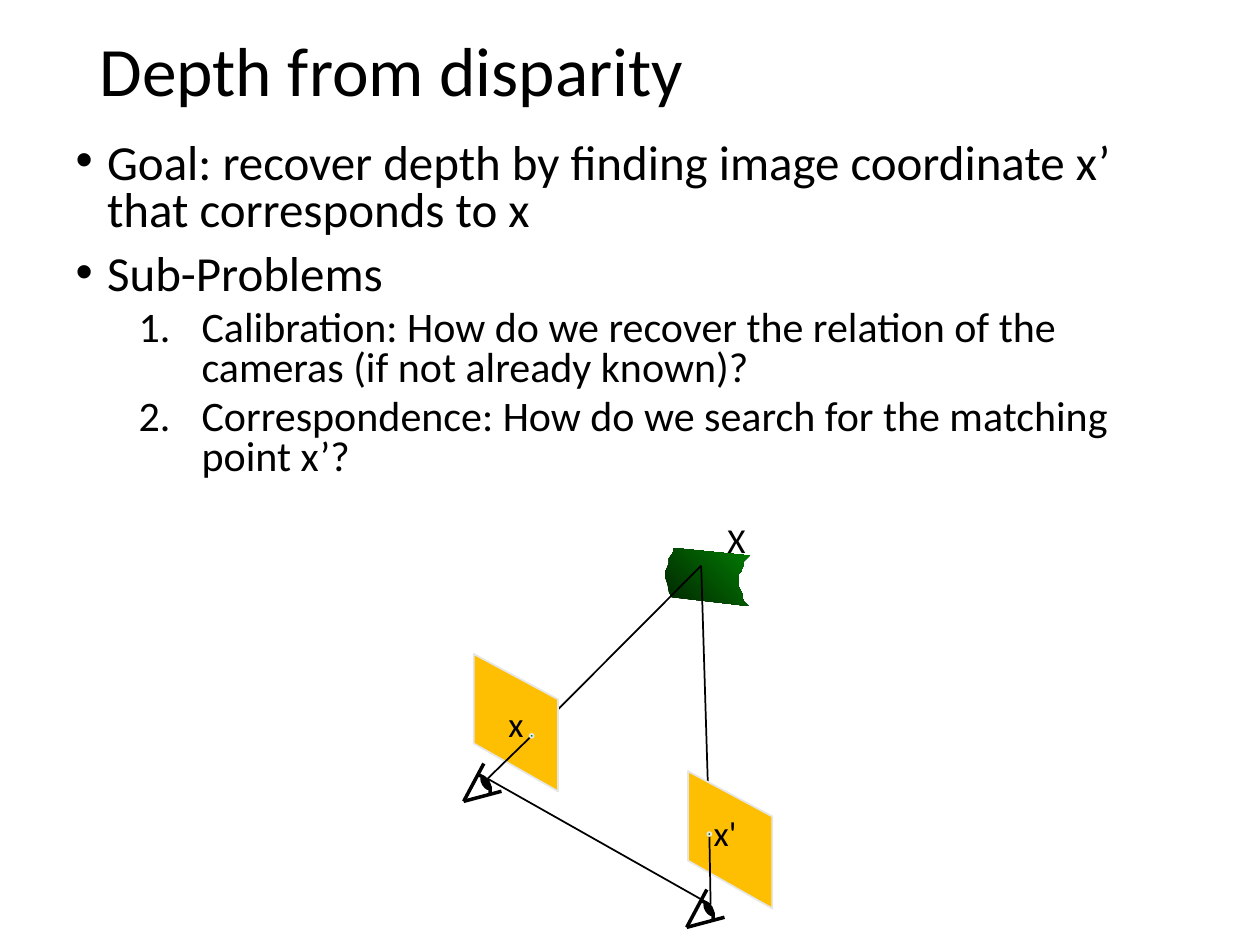
from lxml import etree
from pptx import Presentation
from pptx.dml.color import RGBColor
from pptx.enum.shapes import MSO_CONNECTOR, MSO_SHAPE
from pptx.enum.text import MSO_ANCHOR, MSO_AUTO_SIZE, PP_ALIGN
from pptx.oxml.ns import qn
from pptx.util import Inches, Pt

STRAIGHT, OVAL = MSO_CONNECTOR.STRAIGHT, MSO_SHAPE.OVAL
MIDDLE, TOP = MSO_ANCHOR.MIDDLE, MSO_ANCHOR.TOP
LEFT, CENTER = PP_ALIGN.LEFT, PP_ALIGN.CENTER
NO_FIT = MSO_AUTO_SIZE.NONE

BLACK, AMBER, GRAY = "000000", "FEBF02", "E7E6E6"
DARK_GREEN, GREEN = "012501", "037C03"

TITLE = "Depth from disparity"
BODY = [
    (0, "Goal: recover depth by finding image coordinate x’ that corresponds to x"),
    (0, "Sub-Problems"),
    (1, "Calibration: How do we recover the relation of the cameras (if not already known)?"),
    (1, "Correspondence: How do we search for the matching point x’?"),
]
LEVELS = [
    {"size": 28, "before": 10, "margin": 0.25, "indent": -0.25, "bullet": ("a:buChar", "char", "•")},
    {"size": 24, "before": 5, "margin": 1, "indent": -0.5, "bullet": ("a:buAutoNum", "type", "arabicPeriod")},
]
LABELS = [("X", 5.59, 4.11), ("x", 3.84, 5.57), ("x'", 5.5, 6.44)]

SURFACE = [
    (5.35, 4.35), (5.34, 4.39), (5.31, 4.43), (5.31, 4.47), (5.28, 4.54), (5.28, 4.58),
    (5.3, 4.64), (5.31, 4.7), (5.33, 4.74), (5.94, 4.81), (5.9, 4.77), (5.89, 4.71),
    (5.86, 4.65), (5.86, 4.56), (5.88, 4.54), (5.9, 4.49), (5.9, 4.46), (5.95, 4.41),
]
PLANE = [(3.76, 5.9), (4.43, 6.28), (4.43, 5.55), (3.76, 5.19)]
PLANE_SHIFTS = [(0, 0), (1.7, 0.93)]
EYE_SHIFTS = [(0, 0), (1.77, 1)]
EYE_ARC = [(3.8, 6.15), (3.84, 6.17), (3.87, 6.2), (3.89, 6.25), (3.89, 6.3)]
EYE_SIDES = [((3.84, 6.06), (3.68, 6.36)), ((3.68, 6.36), (3.98, 6.28))]
PUPIL = (3.83, 6.16)
SCENE_POINT = (5.565, 4.49)
IMAGE_POINTS = [(4.22, 5.84), (5.63, 6.62)]
EYE_CENTERS = [(3.87, 6.18), (5.64, 7.18)]


def color(hex_code):
    return RGBColor.from_string(hex_code)


def apply(target, values):
    for name, value in values.items():
        setattr(target, name, value)


def place(shape, left, top, width, height):
    sizes = {"left": left, "top": top, "width": width, "height": height}
    apply(shape, {name: Inches(value) for name, value in sizes.items()})


def shift(points, offset):
    return [(x + offset[0], y + offset[1]) for x, y in points]


def write(para, text, size):
    span = para.add_run()
    span.text = text
    apply(span.font, {"name": "Calibri", "size": Pt(size)})
    span.font.color.rgb = color(BLACK)


def outline(shape, hex_code, width):
    shape.line.color.rgb = color(hex_code)
    shape.line.width = Pt(width)


def add_line(page, start, end, width=1):
    line = page.shapes.add_connector(STRAIGHT, *map(Inches, start + end))
    outline(line, BLACK, width)
    etree.SubElement(line.element.spPr, qn("a:effectLst"))


def add_outline(page, points, closed=True):
    corners = [(Inches(x), Inches(y)) for x, y in points]
    builder = page.shapes.build_freeform(*corners[0])
    builder.add_line_segments(corners[1:], close=closed)
    shape = builder.convert_to_shape()
    shape.shadow.inherit = False
    return shape


def add_oval(page, left, top, width, height, fill, edge, rotation=0):
    oval = page.shapes.add_shape(OVAL, *map(Inches, (left, top, width, height)))
    oval.shadow.inherit = False
    oval.rotation = rotation
    oval.fill.solid()
    oval.fill.fore_color.rgb = color(fill)
    outline(oval, edge, 1)


def add_surface(page):
    surface = add_outline(page, SURFACE)
    surface.fill.gradient()
    surface.fill.gradient_angle = 45
    for stop, hex_code in zip(surface.fill.gradient_stops, (DARK_GREEN, GREEN)):
        stop.color.rgb = color(hex_code)
    surface.line.fill.background()


def add_eye(page, offset):
    arc = add_outline(page, shift(EYE_ARC, offset), closed=False)
    arc.fill.background()
    outline(arc, BLACK, 2)
    add_oval(page, *shift([PUPIL], offset)[0], 0.05, 0.11, BLACK, BLACK, 329)
    for side in EYE_SIDES:
        add_line(page, *shift(side, offset), width=2)


def fill_title(page):
    title = page.shapes.title
    place(title, 0.69, 0.27, 8.62, 0.64)
    apply(title.text_frame, {"auto_size": NO_FIT, "vertical_anchor": MIDDLE})
    para = title.text_frame.paragraphs[0]
    apply(para, {"alignment": LEFT, "line_spacing": 0.9})
    write(para, TITLE, 39.6)


def fill_body(page):
    body = page.placeholders[1]
    place(body, 0.5, 1.08, 9, 2.92)
    frame = body.text_frame
    apply(frame, {"auto_size": NO_FIT, "vertical_anchor": TOP})
    for index, (level, text) in enumerate(BODY):
        style = LEVELS[level]
        para = frame.add_paragraph() if index else frame.paragraphs[0]
        apply(para, {"level": level, "line_spacing": 0.8, "space_before": Pt(style["before"])})
        write(para, text, style["size"])
        properties = para._p.get_or_add_pPr()
        properties.set("marL", str(Inches(style["margin"])))
        properties.set("indent", str(Inches(style["indent"])))
        tag, key, value = style["bullet"]
        etree.SubElement(properties, qn("a:buFont")).set("typeface", "Arial" if level == 0 else "Calibri")
        etree.SubElement(properties, qn(tag)).set(key, value)


def add_label(page, text, left, top):
    box = page.shapes.add_textbox(*map(Inches, (left, top, 0.51, 0.34)))
    apply(box.text_frame, {"word_wrap": True, "vertical_anchor": MIDDLE})
    para = box.text_frame.paragraphs[0]
    para.alignment = CENTER
    write(para, text, 20)


def main():
    deck = Presentation()
    apply(deck, {"slide_width": Inches(10), "slide_height": Inches(7.5)})
    page = deck.slides.add_slide(deck.slide_layouts[1])
    fill_title(page)
    fill_body(page)
    add_surface(page)
    add_line(page, *EYE_CENTERS)
    for point, offset in zip(IMAGE_POINTS, PLANE_SHIFTS):
        add_line(page, point, SCENE_POINT)
        plane = add_outline(page, shift(PLANE, offset))
        plane.fill.solid()
        plane.fill.fore_color.rgb = color(AMBER)
        outline(plane, GRAY, 1)
    for center, point, offset in zip(EYE_CENTERS, IMAGE_POINTS, EYE_SHIFTS):
        add_line(page, center, point)
        add_eye(page, offset)
    for x, y in IMAGE_POINTS:
        add_oval(page, x - 0.015, y - 0.015, 0.03, 0.03, GREEN, GRAY)
    for label in LABELS:
        add_label(page, *label)
    deck.save("out.pptx")


if __name__ == "__main__":
    main()
